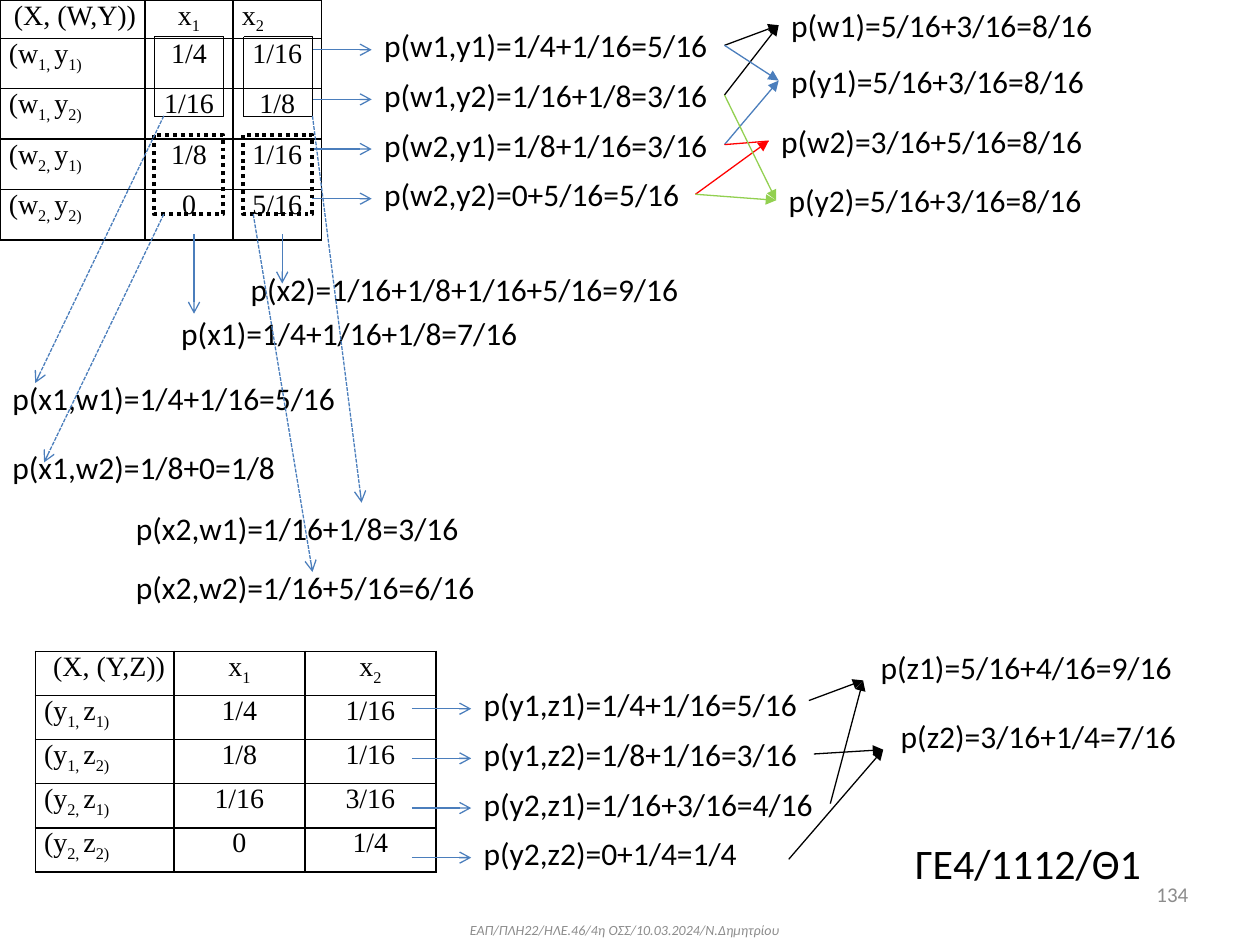
from lxml import etree
from pptx import Presentation
from pptx.dml.color import RGBColor
from pptx.enum.dml import MSO_LINE
from pptx.enum.shapes import MSO_CONNECTOR, MSO_SHAPE
from pptx.enum.text import MSO_ANCHOR, MSO_AUTO_SIZE, PP_ALIGN
from pptx.oxml.ns import qn
from pptx.util import Inches, Pt

BLACK = RGBColor(0x00, 0x00, 0x00)
BLUE = RGBColor(0x4B, 0x7E, 0xBC)
RED = RGBColor(0xFF, 0x00, 0x00)
GREEN = RGBColor(0x92, 0xD0, 0x50)
GREY = RGBColor(0x8C, 0x8C, 0x8C)

LEFT, CENTER, RIGHT = PP_ALIGN.LEFT, PP_ALIGN.CENTER, PP_ALIGN.RIGHT
MIDDLE = MSO_ANCHOR.MIDDLE
DOTTED, DASHED = MSO_LINE.ROUND_DOT, MSO_LINE.SQUARE_DOT
LEFT_SIDE, RIGHT_SIDE = 1, 3
ROW_STEP = 0.394

EQUATION = {"name": "Calibri", "size": Pt(18)}
CELL = {"name": "Times New Roman", "size": Pt(16)}
TITLE = {"name": "Calibri", "size": Pt(24)}
FOOTER = {"name": "Calibri", "size": Pt(8), "italic": True}
NUMBER = {"name": "Calibri", "size": Pt(12)}

WY_ROWS = [
    ["(Χ, (W,Y))", "x|1", "x|2"],
    ["(w|1, |y|1)", "1/4", "1/16"],
    ["(w|1, |y|2)", "1/16", "1/8"],
    ["(w|2, |y|1)", "1/8", "1/16"],
    ["(w|2, |y|2)", "0", "5/16"],
]
YZ_ROWS = [
    ["(Χ, (Y,Z))", "x|1", "x|2"],
    ["(y|1, |z|1)", "1/4", "1/16"],
    ["(y|1, |z|2)", "1/8", "1/16"],
    ["(y|2, |z|1)", "1/16", "3/16"],
    ["(y|2, |z|2)", "0", "1/4"],
]
# Text and box width of the sums over each table row
WY_SUMS = [
    ("p(w1,y1)=1/4+1/16=5/16", 2.8),
    ("p(w1,y2)=1/16+1/8=3/16", 2.8),
    ("p(w2,y1)=1/8+1/16=3/16", 2.8),
    ("p(w2,y2)=0+5/16=5/16", 2.57),
]
YZ_SUMS = [
    ("p(y1,z1)=1/4+1/16=5/16", 2.72),
    ("p(y1,z2)=1/8+1/16=3/16", 2.72),
    ("p(y2,z1)=1/16+3/16=4/16", 2.85),
    ("p(y2,z2)=0+1/4=1/4", 2.24),
]
# Left, top, width, text
MARGINALS = [
    (6.18, 0, 2.62, "p(w1)=5/16+3/16=8/16"),
    (6.18, 0.44, 2.62, "p(y1)=5/16+3/16=8/16"),
    (6.1, 0.92, 2.62, "p(w2)=3/16+5/16=8/16"),
    (6.16, 1.39, 2.62, "p(y2)=5/16+3/16=8/16"),
]
OTHER_EQUATIONS = [
    (1.34, 2.44, 2.9, "p(x1)=1/4+1/16+1/8=7/16"),
    (1.89, 2.09, 3.64, "p(x2)=1/16+1/8+1/16+5/16=9/16"),
    (0, 2.96, 2.79, "p(x1,w1)=1/4+1/16=5/16"),
    (0, 3.51, 2.31, "p(x1,w2)=1/8+0=1/8"),
    (0.98, 3.99, 2.79, "p(x2,w1)=1/16+1/8=3/16"),
    (0.98, 4.46, 2.92, "p(x2,w2)=1/16+5/16=6/16"),
    (6.89, 5.09, 2.62, "p(z1)=5/16+4/16=9/16"),
    (7.05, 5.64, 2.41, "p(z2)=3/16+1/4=7/16"),
]
# Index of the row sum, index of the marginal, colour, arrowhead
MARGINAL_LINKS = [
    (0, 0, BLACK, "triangle"), (1, 0, BLACK, "triangle"),
    (0, 1, BLUE, "triangle"), (2, 1, BLUE, "triangle"),
    (2, 2, RED, None), (3, 2, RED, "triangle"),
    (1, 3, GREEN, "triangle"), (3, 3, GREEN, "triangle"),
]
COLUMN_ARROWS = [((2.24, 1.86), (2.24, 2.25)), ((1.54, 1.86), (1.54, 2.49))]
GROUP_ARROWS = [
    ((1.3, 0.92), (0.28, 3.04)), ((1.3, 1.7), (0.35, 3.67)),
    ((2.48, 0.92), (2.87, 3.99)), ((2.01, 1.7), (2.48, 4.54)),
]
# Index of the row sum, start, end, whether the start joins the sum's box
Z_ARROWS = [
    (0, (6.42, 5.56), (6.85, 5.4), False), (2, (6.59, 6.38), (6.85, 5.4), True),
    (1, (6.46, 5.99), (7.01, 5.95), True), (3, (6.26, 6.82), (7.01, 5.95), False),
]


def write(paragraph, text, format_values, color=BLACK, alignment=LEFT):
    """Fill a paragraph; every second part between bars is a subscript."""
    paragraph.alignment = alignment
    for index, part in enumerate(text.split("|")):
        run = paragraph.add_run()
        run.text = part
        run.font.color.rgb = color
        for name, value in format_values.items():
            setattr(run.font, name, value)
        if index % 2:
            run.font._element.set("baseline", "-25000")


def add_equation(slide, left, top, width, text):
    box = slide.shapes.add_textbox(Inches(left), Inches(top), Inches(width), Inches(0.4))
    box.text_frame.word_wrap = False
    box.text_frame.auto_size = MSO_AUTO_SIZE.SHAPE_TO_FIT_TEXT
    write(box.text_frame.paragraphs[0], text, EQUATION)
    return box


def add_note(slide, left, top, width, text, format_values, alignment):
    box = slide.shapes.add_textbox(Inches(left), Inches(top), Inches(width), Inches(0.4))
    box.text_frame.word_wrap = True
    box.text_frame.vertical_anchor = MIDDLE
    write(box.text_frame.paragraphs[0], text, format_values, GREY, alignment)


def add_line(slide, start, end, color=BLUE, head="arrow", dash=None):
    points = [Inches(value) for value in (*start, *end)]
    line = slide.shapes.add_connector(MSO_CONNECTOR.STRAIGHT, *points)
    line.line.color.rgb = color
    line.line.width = Pt(0.75)
    if dash:
        line.line.dash_style = dash
    if head:
        etree.SubElement(line.line._get_or_add_ln(), qn("a:tailEnd"), type=head)
    etree.SubElement(line._element.spPr, qn("a:effectLst"))
    return line


def add_group_frame(slide, left, top, width):
    frame = slide.shapes.add_shape(
        MSO_SHAPE.RECTANGLE, Inches(left), Inches(top), Inches(0.55), Inches(0.63))
    frame.shadow.inherit = False
    frame.fill.background()
    frame.line.color.rgb = BLACK
    frame.line.width = Pt(width)
    frame.line.dash_style = DOTTED


def add_borders(cell):
    properties = cell._tc.get_or_add_tcPr()
    for side in ("lnL", "lnR", "lnT", "lnB"):
        border = etree.SubElement(properties, qn(f"a:{side}"), w=str(Pt(1)))
        fill = etree.SubElement(border, qn("a:solidFill"))
        etree.SubElement(fill, qn("a:srgbClr"), val=str(BLACK))


def add_probability_table(slide, left, top, widths, heights, rows, header_alignments):
    table = slide.shapes.add_table(
        len(rows), len(widths), Inches(left), Inches(top),
        Inches(sum(widths)), Inches(sum(heights))).table
    table.first_row = table.horz_banding = False
    for column, width in zip(table.columns, widths):
        column.width = Inches(width)
    for row_index, (row, height) in enumerate(zip(rows, heights)):
        table.rows[row_index].height = Inches(height)
        alignments = (LEFT, CENTER, CENTER) if row_index else header_alignments
        for column_index, text in enumerate(row):
            cell = table.cell(row_index, column_index)
            add_borders(cell)
            cell.fill.background()
            cell.margin_left = cell.margin_right = Inches(0.07)
            cell.margin_top = cell.margin_bottom = 0
            write(cell.text_frame.paragraphs[0], text, CELL,
                  alignment=alignments[column_index])


def add_row_sums(slide, left, top, sums):
    """Add one arrow and one equation for each table row; return the equations."""
    boxes = []
    for index, (text, width) in enumerate(sums):
        row_top = top + index * ROW_STEP
        arrow_y = row_top + 0.235
        add_line(slide, (left - 0.47, arrow_y), (left, arrow_y))
        boxes.append(add_equation(slide, left, row_top, width, text))
    return boxes


def set_title(slide, text):
    title = slide.shapes.title
    title.left, title.top = Inches(7.05), Inches(6.58)
    title.width, title.height = Inches(2.22), Inches(0.54)
    title.text_frame.vertical_anchor = MIDDLE
    title.text_frame.auto_size = MSO_AUTO_SIZE.NONE
    write(title.text_frame.paragraphs[0], text, TITLE, alignment=CENTER)


def main():
    presentation = Presentation()
    presentation.slide_width, presentation.slide_height = Inches(10), Inches(7.5)
    slide = presentation.slides.add_slide(presentation.slide_layouts[5])
    set_title(slide, "ΓΕ4/1112/Θ1")
    add_note(slide, 2.97, 7.18, 3.98,
             "ΕΑΠ/ΠΛΗ22/ΗΛΕ.46/4η ΟΣΣ/10.03.2024/Ν.Δημητρίου", FOOTER, CENTER)
    add_note(slide, 7.2, 6.9, 2.33, "134", NUMBER, RIGHT)

    add_probability_table(slide, 0, 0, [1.15, 0.7, 0.7], [0.28] + [0.4] * 4,
                          WY_ROWS, (RIGHT, CENTER, LEFT))
    add_probability_table(slide, 0.28, 5.17, [1.1, 1.04, 1.04], [0.35] * 5,
                          YZ_ROWS, (RIGHT, CENTER, CENTER))
    wy_sums = add_row_sums(slide, 2.95, 0.16, WY_SUMS)
    yz_sums = add_row_sums(slide, 3.74, 5.39, YZ_SUMS)
    marginals = [add_equation(slide, *equation) for equation in MARGINALS]
    for equation in OTHER_EQUATIONS:
        add_equation(slide, *equation)

    for left in (1.22, 1.93):
        add_group_frame(slide, left, 0.29, 0.25)
        add_group_frame(slide, left, 1.07, 2.25)
    for sum_index, marginal_index, color, head in MARGINAL_LINKS:
        link = add_line(slide, (0, 0), (0, 0), color, head)
        link.begin_connect(wy_sums[sum_index], RIGHT_SIDE)
        link.end_connect(marginals[marginal_index], LEFT_SIDE)
    for start, end in COLUMN_ARROWS:
        add_line(slide, start, end)
    for start, end in GROUP_ARROWS:
        add_line(slide, start, end, dash=DASHED)
    for sum_index, start, end, joined in Z_ARROWS:
        arrow = add_line(slide, start, end, BLACK, "triangle")
        if joined:
            arrow.begin_connect(yz_sums[sum_index], RIGHT_SIDE)
    presentation.save("out.pptx")


if __name__ == "__main__":
    main()
